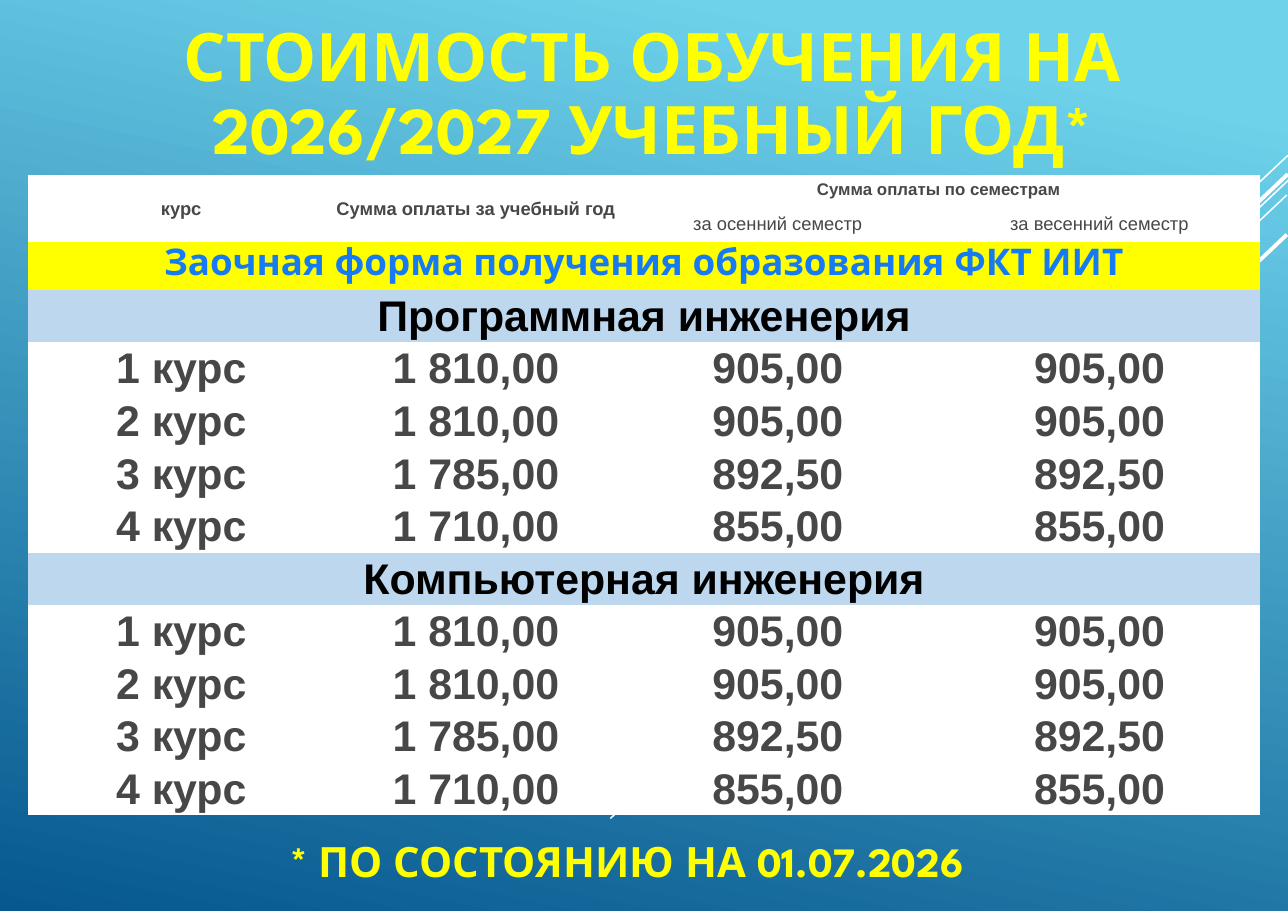
import pptx
import pptx.dml.color
import pptx.enum.shapes
import pptx.enum.text
import pptx.oxml.ns
import pptx.util
import lxml.etree

Inches = pptx.util.Inches
COLORS = {
    "sky": "6ED2EB",
    "deep": "06588E",
    "white": "FFFFFF",
    "yellow": "FFFF00",
    "blue": "167BF3",
    "pale": "BDD7EE",
    "gray": "474747",
    "black": "000000",
}


def rgb(name):
    return pptx.dml.color.RGBColor.from_string(COLORS[name])


def write_centered(frame, text, size, font, color, bold=True):
    paragraph = frame.paragraphs[0]
    paragraph.alignment = pptx.enum.text.PP_ALIGN.CENTER
    run = paragraph.add_run()
    run.text = text
    run.font.size = pptx.util.Pt(size)
    run.font.name = font
    run.font.bold = bold
    run.font.color.rgb = rgb(color)
    return paragraph


presentation = pptx.Presentation()
presentation.slide_width = Inches(11.69)
presentation.slide_height = Inches(8.27)
slide = presentation.slides.add_slide(presentation.slide_layouts[6])

backdrop = slide.background.fill
backdrop.gradient()
backdrop.gradient_angle = 258
for stop, position, color in zip(backdrop.gradient_stops, (0.1, 1), ("sky", "deep")):
    stop.position = position
    stop.color.rgb = rgb(color)

rays = [
    (11.69, 1.41, 7.68, 5.19, 1),
    (11.7, 1.63, 5.54, 7.43, 1),
    (11.68, 1.77, 6.68, 6.49, 1),
    (11.69, 1.58, 6.78, 6.21, 2.5),
    (11.68, 2.13, 7.3, 6.27, 2.5),
]
for *ends, width in rays:
    ray = slide.shapes.add_connector(
        pptx.enum.shapes.MSO_CONNECTOR.STRAIGHT, *map(Inches, ends))
    ray.line.color.rgb = rgb("white")
    ray.line.width = pptx.util.Pt(width)
    lxml.etree.SubElement(ray._element.spPr, pptx.oxml.ns.qn("a:effectLst"))

captions = [
    ("СТОИМОСТЬ ОБУЧЕНИЯ НА 2026/2027 УЧЕБНЫЙ ГОД*", 0.68, 0.64, 0.94, 43.7),
    ("* ПО СОСТОЯНИЮ НА 01.07.2026", 0.45, 7.53, 0.57, 27.3),
]
for text, left, top, height, size in captions:
    caption = slide.shapes.add_textbox(
        Inches(left), Inches(top), Inches(10.48), Inches(height)).text_frame
    caption.word_wrap = True
    caption.vertical_anchor = pptx.enum.text.MSO_ANCHOR.BOTTOM
    line = write_centered(caption, text, size, "League Spartan", "yellow")
    line.line_spacing = 0.9

fees_by_year = [
    ("1 курс", "1 810,00", "905,00", "905,00"),
    ("2 курс", "1 810,00", "905,00", "905,00"),
    ("3 курс", "1 785,00", "892,50", "892,50"),
    ("4 курс", "1 710,00", "855,00", "855,00"),
]
column_widths = [2.79, 2.56, 2.92, 2.92]
row_heights = [0.26, 0.35, 0.43] + [0.44] * 10

fees = slide.shapes.add_table(
    len(row_heights), len(column_widths), Inches(0.25), Inches(1.59),
    Inches(sum(column_widths)), Inches(sum(row_heights))).table
fees.first_row = False
fees.horz_banding = False
table_style = fees._tbl.tblPr.find(pptx.oxml.ns.qn("a:tableStyleId"))
table_style.text = "{2D5ABB26-0587-4C30-8999-92F81FD0307C}"
for column, width in zip(fees.columns, column_widths):
    column.width = Inches(width)
for row, height in zip(fees.rows, row_heights):
    row.height = Inches(height)

entries = [
    (0, 0, 2, 1, "курс", 12, "Arial", "gray", True, "white"),
    (0, 1, 2, 1, "Сумма оплаты за учебный год", 12, "Arial", "gray", True, "white"),
    (0, 2, 1, 2, "Сумма оплаты по семестрам", 11, "Arial", "gray", True, "white"),
    (1, 2, 1, 1, "за осенний семестр", 12, "Arial", "gray", False, "white"),
    (1, 3, 1, 1, "за весенний семестр", 12, "Arial", "gray", False, "white"),
    (2, 0, 1, 4, "Заочная форма получения образования ФКТ ИИТ", 24,
     "League Spartan", "blue", True, "yellow"),
]
for top_row, program in ((3, "Программная инженерия"), (8, "Компьютерная инженерия")):
    entries.append((top_row, 0, 1, 4, program, 28, "Arial", "black", True, "pale"))
    for row, year_fees in enumerate(fees_by_year, top_row + 1):
        for column, value in enumerate(year_fees):
            entries.append((row, column, 1, 1, value, 28, "Arial", "gray", True, "white"))

for row, column, row_span, column_span, text, size, font, color, bold, fill in entries:
    cell = fees.cell(row, column)
    if row_span * column_span > 1:
        cell.merge(fees.cell(row + row_span - 1, column + column_span - 1))
    cell.fill.solid()
    cell.fill.fore_color.rgb = rgb(fill)
    cell.vertical_anchor = pptx.enum.text.MSO_ANCHOR.MIDDLE
    cell.margin_left = cell.margin_right = cell.margin_top = Inches(0.01)
    cell.margin_bottom = 0
    write_centered(cell.text_frame, text, size, font, color, bold)

presentation.save("out.pptx")
